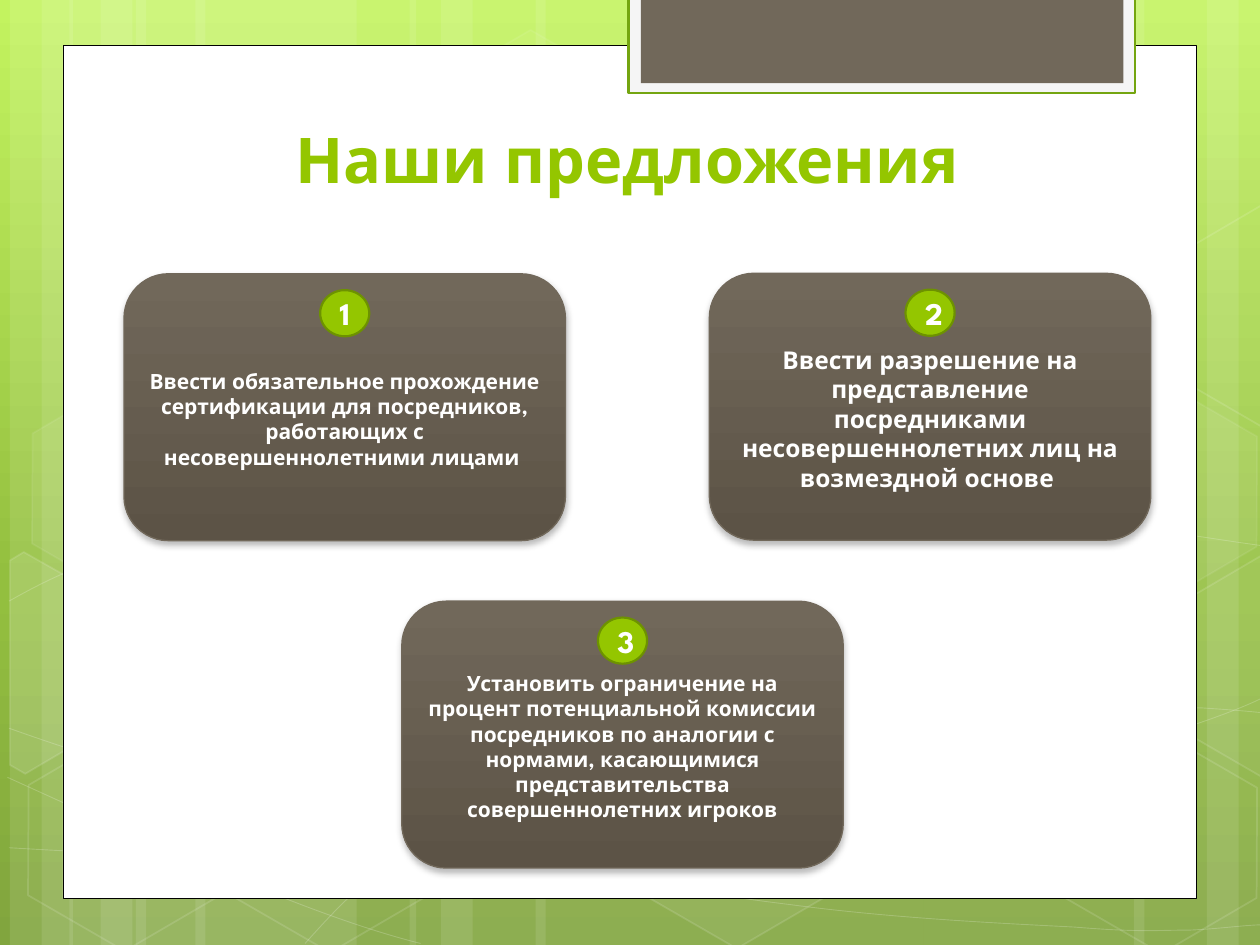
import pptx
import pptx.dml.color
import pptx.enum.shapes
import pptx.enum.text
import pptx.oxml.ns
import pptx.util

Cm = pptx.util.Cm
Pt = pptx.util.Pt
RGBColor = pptx.dml.color.RGBColor
Shape = pptx.enum.shapes.MSO_SHAPE
Anchor = pptx.enum.text.MSO_ANCHOR
qn = pptx.oxml.ns.qn

WHITE = RGBColor(0xFF, 0xFF, 0xFF)
BLACK = RGBColor(0x00, 0x00, 0x00)
SMOKE = RGBColor(0xF5, 0xF5, 0xF5)
LIME = RGBColor(0x94, 0xC6, 0x00)
DARK_LIME = RGBColor(0x6D, 0x92, 0x00)
TAB_GREEN = RGBColor(0x74, 0xA5, 0x10)
TAUPE = RGBColor(0x71, 0x68, 0x5A)
DARK_TAUPE = RGBColor(0x5C, 0x53, 0x46)
SKY_TOP = RGBColor(0xC3, 0xF3, 0x5F)
SKY_MIDDLE = RGBColor(0x93, 0xBF, 0x3F)
SKY_BOTTOM = RGBColor(0x81, 0xA5, 0x3E)

FONT = "League Spartan"
SLIDE_WIDTH, SLIDE_HEIGHT = 25.4, 19.05
CARD_WIDTH, CARD_HEIGHT = 8.9, 5.38
BADGE_WIDTH, BADGE_HEIGHT = 0.99, 0.93

# left, width
STRIPES = [
    (2.74, 4.45), (0.2, 1.27), (0.84, 2.11), (3.94, 4.45), (1.4, 1.27), (2.03, 2.11),
    (18.62, 4.45), (24.33, 1.27), (22.86, 2.11), (10.8, 7.82), (8.26, 1.27), (8.89, 2.11),
]
# start point, then two control points and an end point for each Bezier piece
CURVES = [
    [(0.18, 17.09), (1.55, 17.17), (2.92, 17.25), (4.83, 17.22), (6.73, 17.2),
     (9.09, 17.15), (11.63, 16.89), (14.17, 16.64), (17.78, 16.13), (20.12, 15.67),
     (22.43, 15.19), (24.82, 14.43), (25.58, 14)],
    [(0.18, 12.12), (0.91, 11.71), (1.65, 11.33), (3.07, 10.95), (4.52, 10.57),
     (6.58, 10.01), (8.81, 9.83), (11.07, 9.65), (13.82, 9.63), (16.61, 9.83),
     (19.41, 10.03), (24.05, 10.82), (25.58, 11.02)],
    [(0.15, 15.67), (3.23, 17.07), (6.27, 18.47), (8.48, 19.02)],
    [(0.18, 14.68), (0.97, 14.96), (1.78, 15.24), (3.25, 15.65), (4.72, 16.03),
     (6.93, 16.66), (9.07, 17.09), (11.18, 17.53), (13.84, 17.98), (15.95, 18.24),
     (18.06, 18.52), (20.32, 18.62), (21.67, 18.69), (22.99, 18.8), (23.34, 18.75),
     (24, 18.75), (24.66, 18.72), (25.12, 18.64), (25.58, 18.64)],
    [(6.15, 19.02), (6.6, 18.52), (7.06, 18.01), (7.67, 17.55), (8.28, 17.09),
     (9.14, 16.59), (9.86, 16.23), (10.57, 15.88), (11, 15.72), (11.94, 15.47),
     (12.85, 15.21), (14.55, 14.86), (15.44, 14.68), (16.36, 14.5), (16.48, 14.5),
     (17.27, 14.45), (18.06, 14.38), (19.3, 14.3), (20.17, 14.27), (21.06, 14.25),
     (22.5, 14.27), (24.21, 14.27), (24.66, 14.3), (25.1, 14.33), (25.55, 14.38)],
]
# left, top, fill opacity, line opacity
HEXAGONS = [
    (8.48, 0.91, 4, 8), (12.62, 14.96, 6, 12), (0.28, 15.01, 0, 12), (0.36, 7.92, 7, 8),
    (4.42, 15.04, 0, 12), (21.18, 15.06, 0, 12), (21.18, 7.98, 7, 8),
]
# fill opacity, corners of a hexagon cut by the slide edge
CUT_HEXAGONS = [
    (10, [(0.2, 11.3), (0.48, 11.13), (2.44, 12.24), (2.41, 14.48), (0.51, 15.6), (0.2, 15.42)]),
    (4, [(23.52, 12.32), (25.43, 11.2), (25.63, 11.33), (25.63, 15.57), (25.45, 15.67), (23.52, 14.55)]),
    (0, [(23.52, 5.26), (25.43, 4.14), (25.65, 4.27), (25.63, 8.51), (25.45, 8.61), (23.52, 7.49)]),
]
# number, left, top, text size, text
CARDS = [
    ("3", 8.1, 12.12, 12, "Установить ограничение на процент потенциальной комиссии посредников "
     "по аналогии с нормами, касающимися представительства совершеннолетних игроков"),
    ("1", 2.5, 5.52, 12, "Ввести обязательное прохождение сертификации для посредников, "
     "работающих с несовершеннолетними лицами "),
    ("2", 14.3, 5.51, 14, "Ввести разрешение на представление посредниками "
     "несовершеннолетних лиц на возмездной основе "),
]


def add_child(parent, tag, **attributes):
    child = parent.makeelement(qn(tag), attributes)
    parent.append(child)
    return child


def set_opacity(fill_parent, percent):
    color = fill_parent.find(qn("a:solidFill"))[0]
    add_child(color, "a:alpha", val=str(percent * 1000))


def set_gradient(fill, element, stops):
    """Fill from top to bottom with (percent, color) stops."""
    fill.gradient()
    fill.gradient_angle = 270
    stop_list = element.find(".//" + qn("a:gsLst"))
    for stop in list(stop_list):
        stop_list.remove(stop)
    for percent, color in stops:
        stop = add_child(stop_list, "a:gs", pos=str(percent * 1000))
        add_child(stop, "a:srgbClr", val=str(color))


def style_shape(shape, fill=None, fill_opacity=100, line=None, line_width=1, line_opacity=100):
    shape.shadow.inherit = False
    properties = shape.element.spPr
    if fill is None or fill_opacity == 0:
        shape.fill.background()
    else:
        shape.fill.solid()
        shape.fill.fore_color.rgb = fill
        if fill_opacity < 100:
            set_opacity(properties, fill_opacity)
    if line is None:
        shape.line.fill.background()
    else:
        shape.line.color.rgb = line
        shape.line.width = Pt(line_width)
        if line_opacity < 100:
            set_opacity(properties.find(qn("a:ln")), line_opacity)


def add_preset(page, kind, left, top, width, height, **style):
    shape = page.shapes.add_shape(kind, Cm(left), Cm(top), Cm(width), Cm(height))
    style_shape(shape, **style)
    return shape


def add_outline(page, points, closed, **style):
    corners = [(Cm(x), Cm(y)) for x, y in points]
    builder = page.shapes.build_freeform(*corners[0])
    builder.add_line_segments(corners[1:], close=closed)
    shape = builder.convert_to_shape()
    style_shape(shape, **style)
    return shape


def add_curve(page, knots, **style):
    """Draw an outline through the knots, then turn each three segments into one Bezier piece."""
    outline = add_outline(page, knots, False, **style).element.find(".//" + qn("a:path"))
    segments = outline.findall(qn("a:lnTo"))
    for first in range(0, len(segments), 3):
        piece = add_child(outline, "a:cubicBezTo")
        for segment in segments[first:first + 3]:
            piece.append(segment[0])
            outline.remove(segment)


def write_text(shape, text, size, color=WHITE, anchor=Anchor.MIDDLE):
    frame = shape.text_frame
    frame.word_wrap = True
    frame.auto_size = pptx.enum.text.MSO_AUTO_SIZE.NONE
    frame.vertical_anchor = anchor
    para = frame.paragraphs[0]
    para.alignment = pptx.enum.text.PP_ALIGN.CENTER
    span = para.add_run()
    span.text = text
    span.font.name = FONT
    span.font.size = Pt(size)
    span.font.bold = True
    span.font.color.rgb = color
    return frame


def add_soft_shadow(shape):
    effects = shape.element.spPr.find(qn("a:effectLst"))
    shadow = add_child(effects, "a:outerShdw", blurRad=str(Pt(4)), dist=str(Pt(2)),
                       dir="5400000", rotWithShape="0")
    add_child(add_child(shadow, "a:srgbClr", val=str(BLACK)), "a:alpha", val="28000")


def add_card(page, number, left, top, size, text):
    card = add_preset(page, Shape.ROUNDED_RECTANGLE, left, top, CARD_WIDTH, CARD_HEIGHT,
                      line=TAUPE, line_width=0.75)
    set_gradient(card.fill, card.element, [(0, TAUPE), (100, DARK_TAUPE)])
    add_soft_shadow(card)
    write_text(card, text, size).margin_top = Cm(0.6)
    badge = add_preset(page, Shape.OVAL, left + (CARD_WIDTH - BADGE_WIDTH) / 2, top + 0.33,
                       BADGE_WIDTH, BADGE_HEIGHT, fill=LIME, line=DARK_LIME, line_width=1.25)
    write_text(badge, number, 18)


def add_backdrop(page):
    """Draw the template's decoration and hand it over to the slide layout."""
    layout = page.slide_layout
    set_gradient(layout.background.fill, layout.element,
                 [(0, SKY_TOP), (62, SKY_MIDDLE), (100, SKY_BOTTOM)])
    for left, width in STRIPES:
        add_preset(page, Shape.RECTANGLE, left, 0, width, SLIDE_HEIGHT, fill=WHITE, fill_opacity=10)
    for knots in CURVES:
        add_curve(page, knots, line=WHITE, line_width=0.5, line_opacity=20)
    for left, top, fill_opacity, line_opacity in HEXAGONS:
        hexagon = add_preset(page, Shape.HEXAGON, left, top, 4.45, 3.86, fill=WHITE,
                             fill_opacity=fill_opacity, line=WHITE, line_opacity=line_opacity)
        hexagon.adjustments[0] = 0.285
        hexagon.rotation = 30
    for opacity, corners in CUT_HEXAGONS:
        add_outline(page, corners, True, fill=WHITE, fill_opacity=opacity, line=WHITE, line_opacity=12)
    add_preset(page, Shape.RECTANGLE, 1.27, 0.91, 22.86, 17.2, fill=WHITE, line=BLACK, line_width=0.5)
    add_preset(page, Shape.RECTANGLE, 12.67, -0.05, 10.21, 1.93, fill=SMOKE, line=TAB_GREEN, line_width=1.25)
    add_preset(page, Shape.RECTANGLE, 12.92, -0.05, 9.73, 1.73, fill=TAUPE)
    layout_tree = layout.element.cSld.spTree
    for shape in list(page.shapes):
        if not shape.is_placeholder:
            layout_tree.append(shape.element)


def main():
    deck = pptx.Presentation()
    deck.slide_width, deck.slide_height = Cm(SLIDE_WIDTH), Cm(SLIDE_HEIGHT)
    page = deck.slides.add_slide(deck.slide_layouts[5])
    add_backdrop(page)
    title = page.shapes.title
    title.left, title.top, title.width, title.height = Cm(2.69), Cm(2.13), Cm(20.24), Cm(1.96)
    write_text(title, "Наши предложения ", 36, color=LIME, anchor=Anchor.BOTTOM)
    for card in CARDS:
        add_card(page, *card)
    deck.save("out.pptx")


if __name__ == "__main__":
    main()
